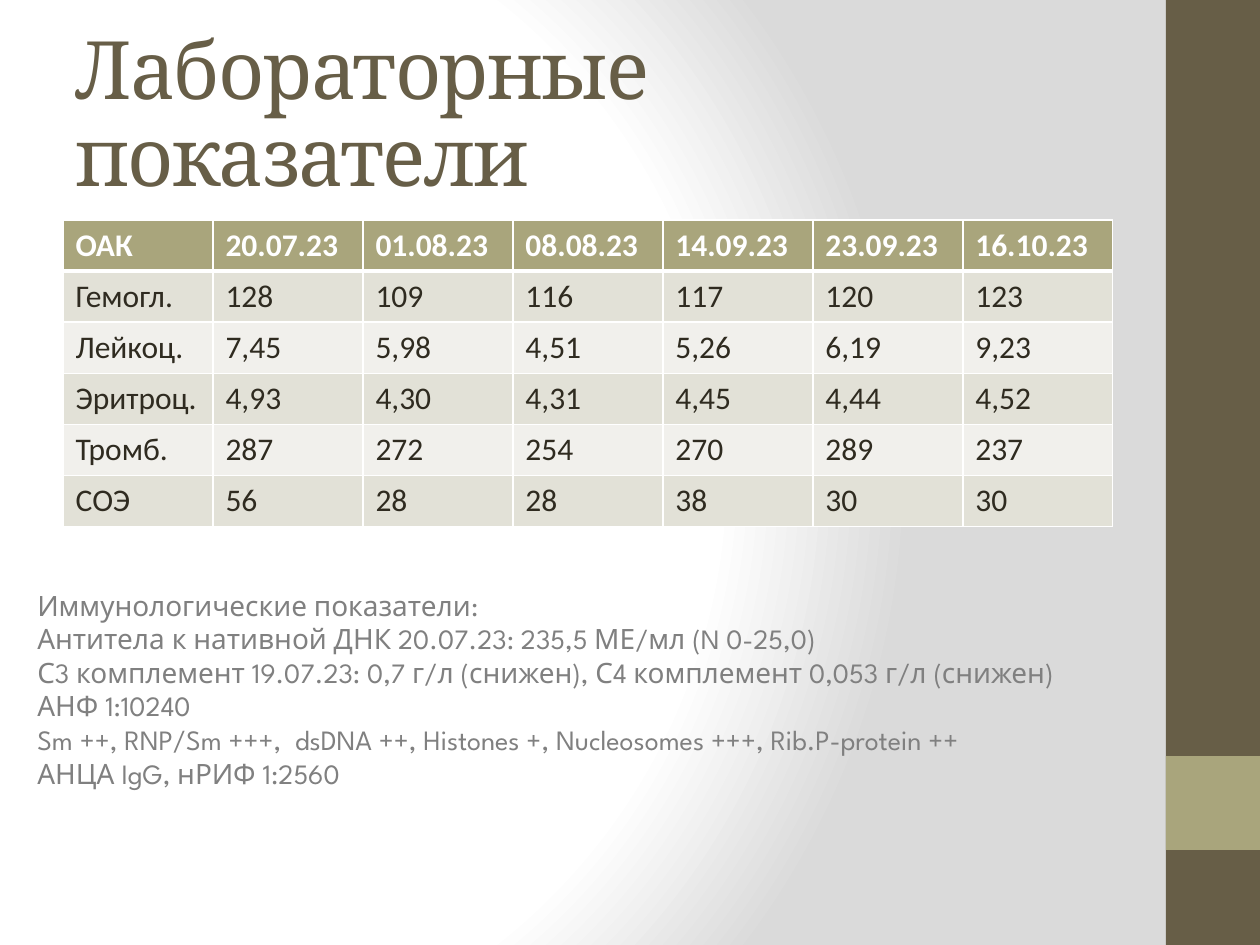
from lxml.etree import fromstring
from pptx import Presentation
from pptx.dml.color import RGBColor
from pptx.enum.shapes import MSO_SHAPE
from pptx.enum.text import MSO_ANCHOR, MSO_AUTO_SIZE, PP_ALIGN
from pptx.oxml.ns import nsdecls
from pptx.util import Pt

PX = 914400 / 126
COLORS = {"brown": "675E47", "olive": "A9A57C", "white": "FFFFFF", "edge": "DADADA",
          "dark": "2F2B20", "grey": "808080", "band": "E2E1D7", "light": "F1F0EC"}


def px(*lengths):
    return [round(length * PX) for length in lengths]


def format_run(run, color, **font_values):
    run.font.color.rgb = RGBColor.from_string(COLORS[color])
    for name, value in font_values.items():
        setattr(run.font, name, value)


prs = Presentation()
prs.slide_width, prs.slide_height = px(1260, 945)
slide = prs.slides.add_slide(prs.slide_layouts[5])

# Background: radial gradient from white to grey
slide.background.fill.solid()
background = slide.background.fill._xPr
background.replace(background[0], fromstring(
    f'<a:gradFill {nsdecls("a")} rotWithShape="1"><a:gsLst>'
    + "".join(f'<a:gs pos="{position}"><a:srgbClr val="{COLORS[color]}"/></a:gs>'
              for position, color in [(0, "white"), (75000, "white"), (100000, "edge")])
    + '</a:gsLst><a:path path="circle">'
      '<a:fillToRect l="20000" t="50000" r="100000" b="50000"/></a:path></a:gradFill>'))

# Side bar with its accent square
for top, height, color in [(0, 945, "brown"), (756, 94, "olive")]:
    bar = slide.shapes.add_shape(MSO_SHAPE.RECTANGLE, *px(1166, top, 94, height))
    bar.shadow.inherit = False
    bar.fill.solid()
    bar.fill.fore_color.rgb = RGBColor.from_string(COLORS[color])
    bar.line.fill.background()

# Title
title = slide.shapes.title
title.left, title.top, title.width, title.height = px(63, 38, 1050, 157)
title_frame = title.text_frame
title_frame.text = "Лабораторные показатели"
for name, value in {"auto_size": MSO_AUTO_SIZE.NONE, "word_wrap": True,
                    "vertical_anchor": MSO_ANCHOR.MIDDLE}.items():
    setattr(title_frame, name, value)
heading = title_frame.paragraphs[0]
heading.alignment = PP_ALIGN.LEFT
heading.line_spacing = 0.9
format_run(heading.runs[0], "brown", name="Cambria", size=Pt(46))
heading.runs[0].font._element.set("spc", "-100")

# Blood count table
blood_count = [
    ["ОАК", "20.07.23", "01.08.23", "08.08.23", "14.09.23", "23.09.23", "16.10.23"],
    ["Гемогл.", "128", "109", "116", "117", "120", "123"],
    ["Лейкоц.", "7,45", "5,98", "4,51", "5,26", "6,19", "9,23"],
    ["Эритроц.", "4,93", "4,30", "4,31", "4,45", "4,44", "4,52"],
    ["Тромб.", "287", "272", "254", "270", "289", "237"],
    ["СОЭ", "56", "28", "28", "38", "30", "30"],
]
table = slide.shapes.add_table(len(blood_count), len(blood_count[0]),
                               *px(63, 220, 1050, 306)).table
for row_number, values in enumerate(blood_count):
    is_header = row_number == 0
    fill = "olive" if is_header else "band" if row_number % 2 else "light"
    border_points = {"L": 1, "R": 1, "T": 3 if row_number == 1 else 1, "B": 3 if is_header else 1}
    for column_number, value in enumerate(values):
        cell = table.cell(row_number, column_number)
        cell.text = value
        format_run(cell.text_frame.paragraphs[0].runs[0], "white" if is_header else "dark",
                   name="Calibri", size=Pt(18), bold=is_header)
        cell.fill.solid()
        cell.fill.fore_color.rgb = RGBColor.from_string(COLORS[fill])
        for order, (side, points) in enumerate(border_points.items()):
            cell._tc.tcPr.insert(order, fromstring(
                f'<a:ln{side} {nsdecls("a")} w="{Pt(points)}"><a:solidFill>'
                f'<a:srgbClr val="{COLORS["white"]}"/></a:solidFill></a:ln{side}>'))

# Immunology results
immunology = [
    "Иммунологические показатели:",
    "Антитела к нативной ДНК 20.07.23: 235,5 МЕ/мл (N 0-25,0)",
    "С3 комплемент 19.07.23: 0,7 г/л (снижен), С4 комплемент 0,053 г/л (снижен)",
    "АНФ 1:10240",
    "Sm ++, RNP/Sm +++,  dsDNA ++, Histones +, Nucleosomes +++, Rib.P-protein ++",
    "АНЦА IgG, нРИФ 1:2560",
]
results_frame = slide.shapes.add_textbox(*px(25, 582, 1110, 255)).text_frame
results_frame.word_wrap = True
results_frame.text = "\n".join(immunology)
for result in results_frame.paragraphs:
    format_run(result.runs[0], "grey", name="League Spartan", size=Pt(16))

prs.save("out.pptx")
